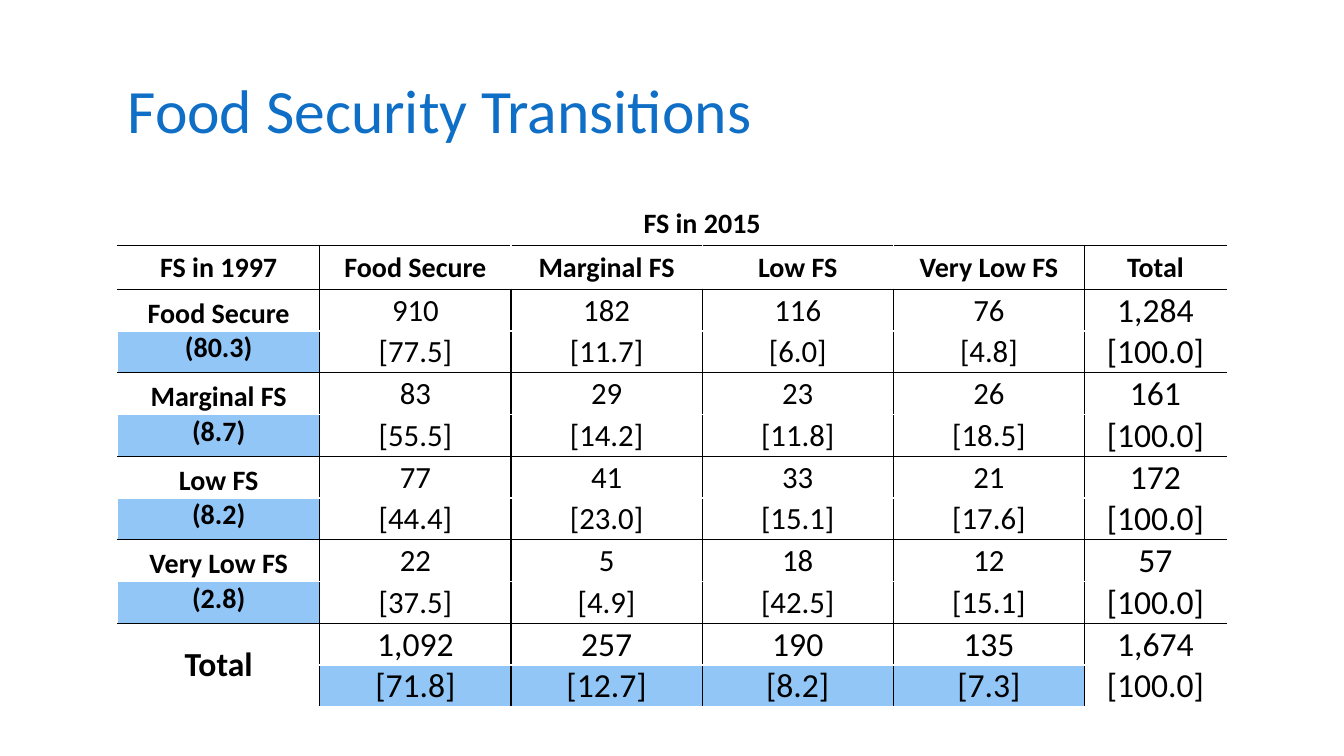
from lxml import etree
from pptx import Presentation
from pptx.dml.color import RGBColor
from pptx.enum.text import MSO_ANCHOR, PP_ALIGN
from pptx.oxml.ns import qn
from pptx.util import Inches, Pt

CENTER, LEFT = PP_ALIGN.CENTER, PP_ALIGN.LEFT
TOP, MIDDLE, BOTTOM = MSO_ANCHOR.TOP, MSO_ANCHOR.MIDDLE, MSO_ANCHOR.BOTTOM

COLORS = {"title": "0F6FC6", "ink": "000000", "paper": "FFFFFF", "highlight": "91C6F7"}
FONT = "Calibri"
SLIDE_SIZE = (Inches(13.33), Inches(7.5))
COLUMN_WEIGHTS = [2.01, 1.9, 1.9, 1.9, 1.9, 1.41]

LEVELS = ["Food Secure", "Marginal FS", "Low FS", "Very Low FS"]
LEVEL_SHARES = ["(80.3)", "(8.7)", "(8.2)", "(2.8)"]
COUNTS = [
    ["910", "182", "116", "76", "1,284"],
    ["83", "29", "23", "26", "161"],
    ["77", "41", "33", "21", "172"],
    ["22", "5", "18", "12", "57"],
    ["1,092", "257", "190", "135", "1,674"],
]
PERCENTS = [
    ["[77.5]", "[11.7]", "[6.0]", "[4.8]", "[100.0]"],
    ["[55.5]", "[14.2]", "[11.8]", "[18.5]", "[100.0]"],
    ["[44.4]", "[23.0]", "[15.1]", "[17.6]", "[100.0]"],
    ["[37.5]", "[4.9]", "[42.5]", "[15.1]", "[100.0]"],
    ["[71.8]", "[12.7]", "[8.2]", "[7.3]", "[100.0]"],
]
HEADER_ROWS = 2
TOTAL_COLUMN = len(LEVELS) + 1
TOTAL_ROW = HEADER_ROWS + 2 * len(LEVELS)
LAST_ROW = TOTAL_ROW + 1


def transition_rows():
    """Two header rows, then a count row and a percent row for each level."""
    rows = [["", "FS in 2015", "", "", "", ""], ["FS in 1997", *LEVELS, "Total"]]
    labels = zip(LEVELS + ["Total"], LEVEL_SHARES + [""])
    for (level, share), counts, percents in zip(labels, COUNTS, PERCENTS):
        rows += [[level, *counts], [share, *percents]]
    return rows


def horizontal_rule(edge):
    """Colour of the line above row number edge."""
    ruled = edge == 1 or (edge % 2 == 0 and 0 < edge <= TOTAL_ROW)
    return "ink" if ruled else "paper"


def vertical_rule(row, edge):
    """Colour of the line to the left of column number edge."""
    if row == 0 or edge in (0, TOTAL_COLUMN + 1):
        return "paper"
    inside_header = row == 1 and 1 < edge < TOTAL_COLUMN
    return "paper" if inside_header else "ink"


def cell_style(row, column):
    """Size, bold, anchor, margins and fill of one cell."""
    if row < HEADER_ROWS:
        return 20, True, MIDDLE, None, "paper"
    percent_row = row % 2 == 1
    if column == 0:
        if row >= TOTAL_ROW:
            return 24, True, MIDDLE, None, "paper"
        if percent_row:
            return 20, True, TOP, (0, 0, 0, 0), "highlight"
        return 20, True, BOTTOM, (0, 0, 0, 0), "paper"
    in_totals = row >= TOTAL_ROW or column == TOTAL_COLUMN
    marginal_share = row == LAST_ROW and column < TOTAL_COLUMN
    fill = "highlight" if marginal_share else "paper"
    return 24 if in_totals else 22, False, MIDDLE, (0.01, 0.01, 0.01, 0), fill


class TransitionSlide:
    def __init__(self, presentation):
        self.width, self.height = presentation.slide_width, presentation.slide_height
        self.slide = presentation.slides.add_slide(presentation.slide_layouts[6])

    def box(self, left, top, width, height):
        """Turn shares of the slide's size into lengths."""
        return (int(left * self.width), int(top * self.height),
                int(width * self.width), int(height * self.height))

    def set_text(self, paragraph, text, size, color, bold=False, align=LEFT):
        paragraph.text = text
        paragraph.alignment = align
        font = paragraph.font
        font.name, font.size, font.bold = FONT, Pt(size), bold
        font.color.rgb = RGBColor.from_string(COLORS[color])

    def title(self, text, *shares):
        frame = self.slide.shapes.add_textbox(*self.box(*shares)).text_frame
        frame.word_wrap = True
        frame.vertical_anchor = MIDDLE
        heading = frame.paragraphs[0]
        self.set_text(heading, text, 44, "title")
        heading.line_spacing = 0.9

    def borders(self, cell, row, column):
        properties = cell._tc.get_or_add_tcPr()
        rules = {
            "a:lnL": vertical_rule(row, column),
            "a:lnR": vertical_rule(row, column + 1),
            "a:lnT": horizontal_rule(row),
            "a:lnB": horizontal_rule(row + 1),
        }
        for side, color in rules.items():
            line = etree.SubElement(properties, qn(side), w=str(Pt(1)))
            fill = etree.SubElement(line, qn("a:solidFill"))
            etree.SubElement(fill, qn("a:srgbClr"), val=COLORS[color])

    def cell(self, cell, row, column, text):
        size, bold, anchor, margins, fill = cell_style(row, column)
        self.borders(cell, row, column)
        cell.fill.solid()
        cell.fill.fore_color.rgb = RGBColor.from_string(COLORS[fill])
        cell.vertical_anchor = anchor
        if margins:
            (cell.margin_left, cell.margin_top,
             cell.margin_right, cell.margin_bottom) = map(Inches, margins)
        if text:
            self.set_text(cell.text_frame.paragraphs[0], text, size, "ink", bold, CENTER)

    def table(self, rows, weights, *shares):
        left, top, width, height = self.box(*shares)
        table = self.slide.shapes.add_table(
            len(rows), len(weights), left, top, width, height).table
        table.first_row = table.horz_banding = False
        for column, weight in zip(table.columns, weights):
            column.width = int(width * weight / sum(weights))
        for row, texts in enumerate(rows):
            for column, text in enumerate(texts):
                self.cell(table.cell(row, column), row, column, text)
        table.cell(0, 1).merge(table.cell(0, len(LEVELS)))
        table.cell(TOTAL_ROW, 0).merge(table.cell(LAST_ROW, 0))


def main():
    presentation = Presentation()
    presentation.slide_width, presentation.slide_height = SLIDE_SIZE
    slide = TransitionSlide(presentation)
    left, width = 0.0875, 0.825
    slide.title("Food Security Transitions", left, 0.053, width, 0.193)
    slide.table(transition_rows(), COLUMN_WEIGHTS, left, 0.267, width, 0.663)
    presentation.save("out.pptx")


if __name__ == "__main__":
    main()
